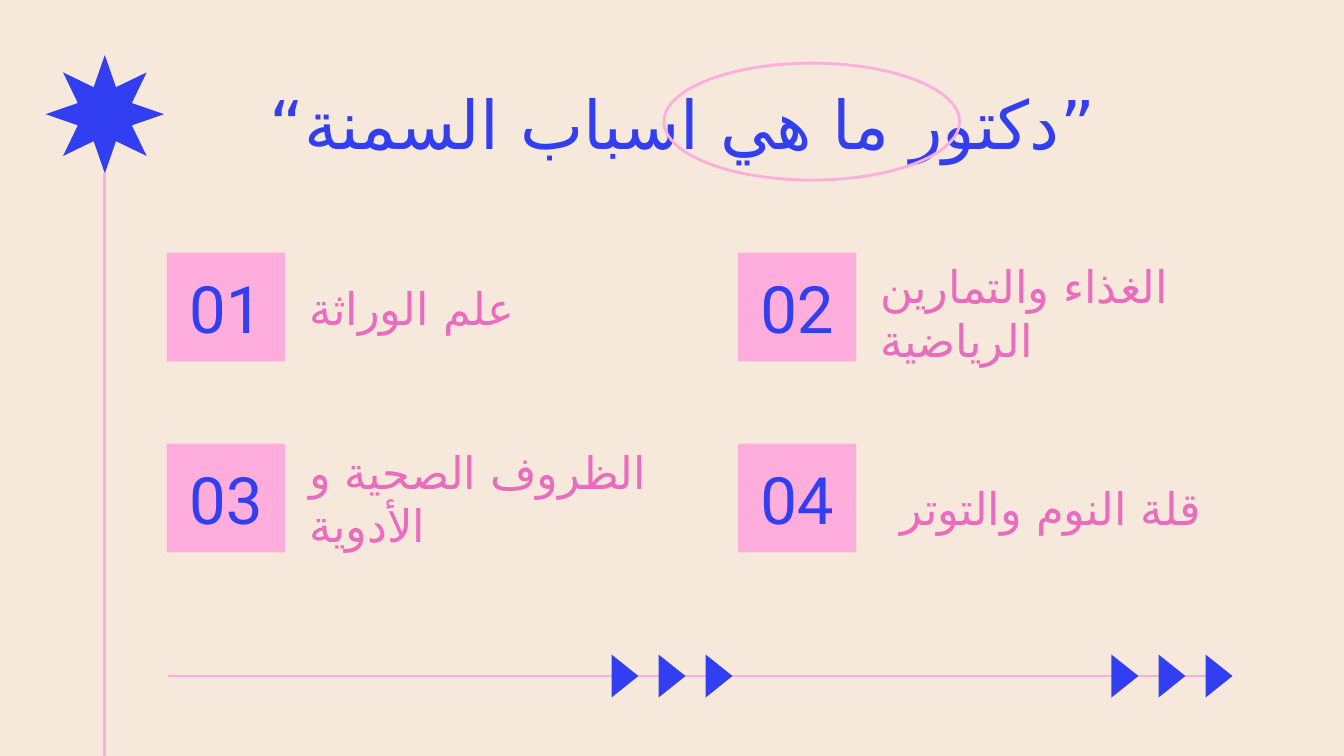
from lxml import etree
from pptx import Presentation
from pptx import util as u
from pptx.dml.color import RGBColor
from pptx.enum import shapes as es, text as et
from pptx.oxml.ns import qn

BLUE, PINK, ROSE, CREAM = "313EF2", "FEADDD", "EB6BBE", "F7E8DC"
FONT, ARABIC = "Roboto", "DejaVu Sans"
WIDE = 10
HIGH = WIDE * 9 / 16

TITLE = " “دكتور ما هي اسباب السمنة”"
# number, lines, top of text, first-line indent
CAUSES = [
    ("01", ["علم الوراثة"], 2.12, 0),
    ("02", ["الغذاء والتمارين الرياضية"], 2.16, 0),
    ("03", ["الظروف الصحية و", "الأدوية"], 3.54, 0),
    ("04", ["قلة النوم والتوتر"], 3.48, 0.15),
]
COLS, ROWS = (1.24, 5.49), (1.88, 3.3)
TILE_W, TILE_H = 0.88, 0.81
TEXT_W, TEXT_H, TEXT_DX = 2.71, 0.33, 0.96
ARROWS, ARROW_GAP = (4.49, 8.21), 0.35


def color(code):
    return RGBColor.from_string(code)


def place(item, *box):
    item.left, item.top, item.width, item.height = map(u.Inches, box)


def write(item, lines, size, tone, align, anchor=et.MSO_ANCHOR.MIDDLE, indent=0):
    """Fill a shape with unbulleted paragraphs in one style."""
    frame = item.text_frame
    frame.text = "\n".join(lines)
    frame.word_wrap = True
    frame.auto_size = et.MSO_AUTO_SIZE.NONE
    frame.vertical_anchor = anchor
    for side in ("left", "right", "top", "bottom"):
        setattr(frame, "margin_" + side, u.Inches(0.1))
    for para in frame.paragraphs:
        para.alignment = align
        para.line_spacing = 1.0
        para.space_before = para.space_after = u.Pt(0)
        props = para._p.get_or_add_pPr()
        props.set("marL", str(u.Inches(indent)))
        props.set("indent", "0")
        etree.SubElement(props, qn("a:buNone"))
        for run in para.runs:
            run.font.size = u.Pt(size)
            run.font.bold = False
            run.font.name = FONT
            run.font.color.rgb = color(tone)
            script = etree.SubElement(run._r.get_or_add_rPr(), qn("a:cs"))
            script.set("typeface", ARABIC)


def shape(kind, box, fill=None, line=None):
    item = slide.shapes.add_shape(kind, *map(u.Inches, box))
    item.shadow.inherit = False
    if fill:
        item.fill.solid()
        item.fill.fore_color.rgb = color(fill)
    else:
        item.fill.background()
    if line:
        item.line.color.rgb = color(line)
        item.line.width = u.Pt(1.5)
    else:
        item.line.fill.background()
    return item


def rule(*ends):
    line = slide.shapes.add_connector(es.MSO_CONNECTOR.STRAIGHT, *map(u.Inches, ends))
    line.line.color.rgb = color(PINK)
    line.line.width = u.Pt(1.5)
    etree.SubElement(line._element.spPr, qn("a:effectLst"))


deck = Presentation()
deck.slide_width, deck.slide_height = u.Inches(WIDE), u.Inches(HIGH)
slide = deck.slides.add_slide(deck.slide_layouts.get_by_name("Comparison"))
slide.background.fill.solid()
slide.background.fill.fore_color.rgb = color(CREAM)
kinds, aligns = es.MSO_SHAPE, et.PP_ALIGN

star = shape(kinds.STAR_8_POINT, (0.34, 0.41, 0.88, 0.88), BLUE)
star.adjustments[0] = 0.247
rule(0.78, 1.29, 0.78, HIGH)
rule(1.25, 5.03, 9.17, 5.03)
for start in ARROWS:
    for step in range(3):
        box = (start + step * ARROW_GAP, 4.93, 0.32, 0.2)
        shape(kinds.ISOSCELES_TRIANGLE, box, BLUE).rotation = 90

title = slide.shapes.title
place(title, 0.78, 0.65, 8.44, 0.52)
write(title, [TITLE], 36, BLUE, aligns.CENTER)

bodies = [hold for hold in slide.placeholders if hold.placeholder_format.idx > 0]
for i, (number, lines, top, indent) in enumerate(CAUSES):
    left = COLS[i % 2]
    tile = shape(kinds.RECTANGLE, (left, ROWS[i // 2], TILE_W, TILE_H), PINK)
    write(tile, [number], 35, BLUE, aligns.CENTER)
    anchor = et.MSO_ANCHOR.TOP if indent else et.MSO_ANCHOR.MIDDLE
    place(bodies[i], left + TEXT_DX, top, TEXT_W, TEXT_H)
    write(bodies[i], lines, 24, ROSE, aligns.LEFT, anchor, indent)

shape(kinds.OVAL, (4.94, 0.47, 2.2, 0.87), line=PINK)

deck.save("out.pptx")
